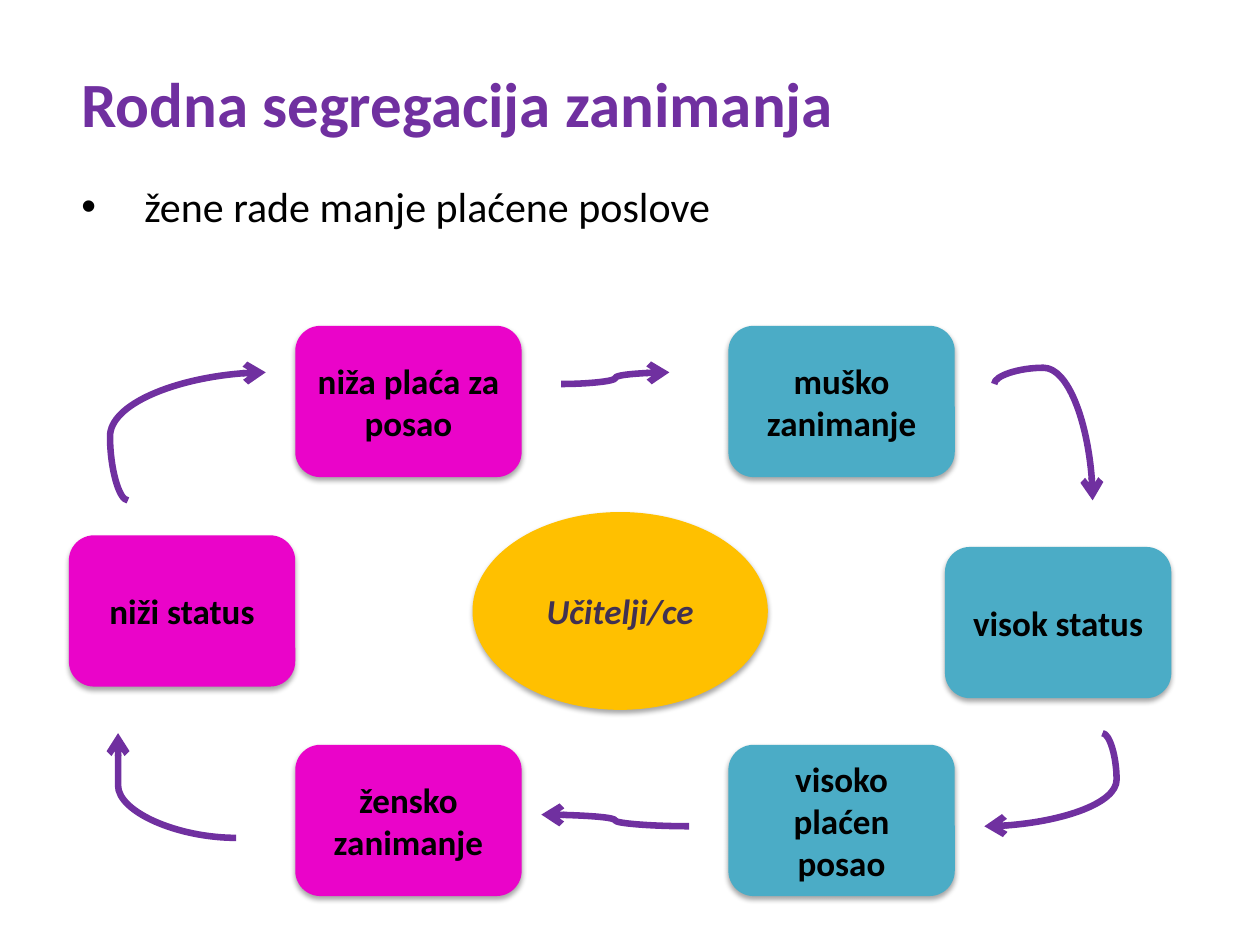
from lxml.etree import SubElement
from pptx import Presentation
from pptx.dml.color import RGBColor
from pptx.enum.shapes import MSO_CONNECTOR, MSO_SHAPE
from pptx.enum.text import MSO_ANCHOR, MSO_AUTO_SIZE, PP_ALIGN
from pptx.oxml.ns import qn
from pptx.util import Inches, Pt

THEME = {
    "font": "Calibri",
    "purple": "7030A0", "black": "000000", "teal": "4BACC6",
    "pink": "EA04C9", "gold": "FFC000", "plum": "403152",
    "title": 36, "body": 24, "label": 20, "line": 3.75,
}

prs = Presentation()
prs.slide_width, prs.slide_height = Inches(10), Inches(7.5)
s = prs.slides.add_slide(prs.slide_layouts[6])
COL = prs.slide_width / 128
ROW = prs.slide_height / 81.2


def grid(x, y):
    return round(x * COL), round(y * ROW)


def add_run(p, text, size, color, bold=True, italic=False):
    r = p.add_run()
    r.text = text
    r.font.name = THEME["font"]
    r.font.size = Pt(THEME[size])
    r.font.bold, r.font.italic = bold, italic
    r.font.color.rgb = RGBColor.from_string(THEME[color])


tb = s.shapes.add_textbox(*grid(7, 6), *grid(117, 15))
tf = tb.text_frame
tf.word_wrap = True
tf.auto_size = MSO_AUTO_SIZE.SHAPE_TO_FIT_TEXT
title, bullet = tf.paragraphs[0], tf.add_paragraph()
for p, before, after, indent in [(title, 0, 18, 0.29), (bullet, 9.6, 12, 0.5)]:
    p.line_spacing = 0.85
    p.space_before, p.space_after = Pt(before), Pt(after)
    pPr = p._p.get_or_add_pPr()
    pPr.set("marL", str(Inches(indent)))
    pPr.set("indent", str(-Inches(indent)))
add_run(title, "Rodna segregacija zanimanja", "title", "purple")
add_run(bullet, "žene rade manje plaćene poslove", "body", "black", bold=False)
pPr = bullet._p.get_or_add_pPr()
SubElement(pPr, qn("a:buFont"), typeface="Arial")
SubElement(pPr, qn("a:buChar"), char="•")

BOX, OVAL = (MSO_SHAPE.ROUNDED_RECTANGLE, 23, 13), (MSO_SHAPE.OVAL, 30, 17)
nodes = [
    ("visoko plaćen posao", 74, 64, BOX, "teal", "black"),
    ("visok status", 96, 47, BOX, "teal", "black"),
    ("muško zanimanje", 74, 28, BOX, "teal", "black"),
    ("žensko zanimanje", 30, 64, BOX, "pink", "black"),
    ("niži status", 7, 46, BOX, "pink", "black"),
    ("niža plaća za posao", 30, 28, BOX, "pink", "black"),
    ("Učitelji/ce", 48, 44, OVAL, "gold", "plum"),
]
for text, x, y, (kind, w, h), fill, color in nodes:
    sp = s.shapes.add_shape(kind, *grid(x, y), *grid(w, h))
    sp.fill.solid()
    sp.fill.fore_color.rgb = RGBColor.from_string(THEME[fill])
    sp.line.fill.background()
    sp.shadow.inherit = False
    effects = sp._element.spPr.find(qn("a:effectLst"))
    shadow = SubElement(effects, qn("a:outerShdw"), blurRad=str(Pt(3.1)),
                        dist=str(Pt(1.8)), dir="5400000", rotWithShape="0")
    clr = SubElement(shadow, qn("a:srgbClr"), val=THEME["black"])
    SubElement(clr, qn("a:alpha"), val="35000")
    tf = sp.text_frame
    tf.word_wrap = True
    tf.vertical_anchor = MSO_ANCHOR.MIDDLE
    p = tf.paragraphs[0]
    p.alignment = PP_ALIGN.CENTER
    add_run(p, text, "label", color, italic=kind == MSO_SHAPE.OVAL)

arrows = [
    ((101, 33), (111, 43), -0.14, True),
    ((112, 63), (100, 71), -0.12, False),
    ((70, 71), (55, 70), 0.5, False),
    ((24, 72), (12, 63), 1, False),
    ((13, 43), (27, 32), -0.13, False),
    ((57, 33), (68, 32), 0.5, False),
]
for start, end, bend, turned in arrows:
    (x1, y1), (x2, y2) = grid(*start), grid(*end)
    if turned:
        cx, cy = (x1 + x2) // 2, (y1 + y2) // 2
        dx, dy = (y2 - y1) // 2, (x2 - x1) // 2
        x1, y1, x2, y2 = cx + dx, cy - dy, cx - dx, cy + dy
    cn = s.shapes.add_connector(MSO_CONNECTOR.CURVE, x1, y1, x2, y2)
    cn.line.color.rgb = RGBColor.from_string(THEME["purple"])
    cn.line.width = Pt(THEME["line"])
    spPr = cn._element.spPr
    if turned:
        spPr.find(qn("a:xfrm")).set("rot", "16200000")
    geom = spPr.find(qn("a:prstGeom"))
    av = geom.find(qn("a:avLst"))
    if av is None:
        av = SubElement(geom, qn("a:avLst"))
    SubElement(av, qn("a:gd"), name="adj1", fmla=f"val {round(bend * 100000)}")
    SubElement(spPr.find(qn("a:ln")), qn("a:tailEnd"), type="arrow")
    SubElement(spPr, qn("a:effectLst"))

prs.save("out.pptx")
